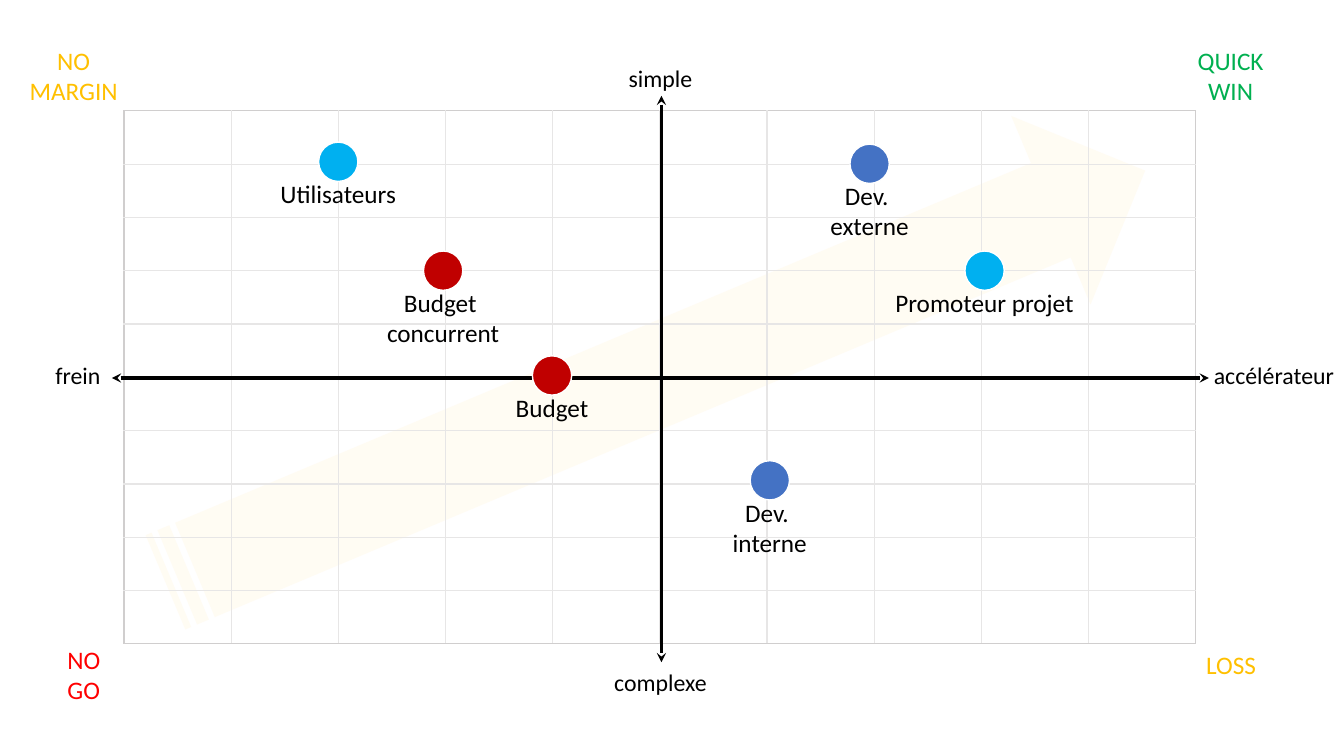
import pptx
import pptx.util
import pptx.dml.color
import pptx.enum.shapes
import pptx.enum.text
import pptx.oxml
import pptx.oxml.ns
from lxml import etree

Inches = pptx.util.Inches
Pt = pptx.util.Pt
MSO_SHAPE = pptx.enum.shapes.MSO_SHAPE
LEFT = pptx.enum.text.PP_ALIGN.LEFT
CENTER = pptx.enum.text.PP_ALIGN.CENTER

COLORS = {
    "black": "000000", "white": "FFFFFF", "cream": "FFFCF3",
    "grid": "E7E6E6", "frame": "D0CECE",
    "amber": "FFC000", "red": "FF0000", "green": "00B050",
    "dark red": "C00000", "sky": "00B0F0", "blue": "4472C4",
}
GRID_SIZE = 10
GRID_LEFT, GRID_TOP, GRID_WIDTH, GRID_HEIGHT = 1.23, 1.1, 10.63, 5.29
CIRCLE = 0.39
LABEL_WIDTH, LABEL_OFFSET = 2, 0.36


def rgb(name):
    return pptx.dml.color.RGBColor.from_string(COLORS[name])


def add_text(box, lines, size, color, wrap, margins=None):
    """Add a text box; lines are (text, alignment) pairs, one per paragraph."""
    frame = slide.shapes.add_textbox(*map(Inches, box)).text_frame
    frame_format = {
        "word_wrap": wrap,
        "auto_size": pptx.enum.text.MSO_AUTO_SIZE.SHAPE_TO_FIT_TEXT,
        **(margins or {}),
    }
    for attribute, value in frame_format.items():
        setattr(frame, attribute, value)
    for index, (text, alignment) in enumerate(lines):
        paragraph = frame.add_paragraph() if index else frame.paragraphs[0]
        paragraph.text = text
        paragraph.alignment = alignment
        for run in paragraph.runs:
            for attribute, value in {"name": "Calibri", "size": Pt(size)}.items():
                setattr(run.font, attribute, value)
            run.font.color.rgb = rgb(color)


presentation = pptx.Presentation()
presentation.slide_width = Inches(13.33)
presentation.slide_height = Inches(7.5)
slide = presentation.slides.add_slide(presentation.slide_layouts[6])

# Background arrow
trend = slide.shapes.add_shape(
    MSO_SHAPE.STRIPED_RIGHT_ARROW, Inches(1.23), Inches(2.72), Inches(10.54), Inches(2.03))
trend.rotation = 337.2
trend.shadow.inherit = False
trend.fill.solid()
trend.fill.fore_color.rgb = rgb("cream")
trend.line.fill.background()

# Grid
table = slide.shapes.add_table(
    GRID_SIZE, GRID_SIZE, Inches(GRID_LEFT), Inches(GRID_TOP),
    Inches(GRID_WIDTH), Inches(GRID_HEIGHT)).table
table.first_row = False
table.horz_banding = False
for column in table.columns:
    column.width = Inches(GRID_WIDTH / GRID_SIZE)
for row in table.rows:
    row.height = Inches(GRID_HEIGHT / GRID_SIZE)
last = GRID_SIZE - 1
for row in range(GRID_SIZE):
    for column in range(GRID_SIZE):
        cell = table.cell(row, column)
        on_frame = {"L": column == 0, "R": column == last, "T": row == 0, "B": row == last}
        properties = cell._tc.get_or_add_tcPr()
        for side, outer in on_frame.items():
            color = COLORS["frame" if outer else "grid"]
            properties.append(pptx.oxml.parse_xml(
                f'<a:ln{side} {pptx.oxml.ns.nsdecls("a")} w="12700"><a:solidFill>'
                f'<a:srgbClr val="{color}"/></a:solidFill></a:ln{side}>'))
        cell.fill.background()

# Axis names
for text, box, alignment, wrap in [
    ("accélérateur", (11.94, 3.53, 1.41, 0.39), LEFT, False),
    ("frein", (0.45, 3.53, 0.65, 0.39), LEFT, False),
    ("simple", (5.49, 0.58, 2.12, 0.39), CENTER, True),
    ("complexe", (5.49, 6.57, 2.12, 0.39), CENTER, True),
]:
    add_text(box, [(text, alignment)], 17, "black", wrap)

# Axes
for ends in [(6.56, 0.95, 6.56, 6.57), (1.11, 3.75, 11.99, 3.75)]:
    axis = slide.shapes.add_connector(
        pptx.enum.shapes.MSO_CONNECTOR.STRAIGHT, *map(Inches, ends))
    axis.line.width = Pt(2.25)
    axis.line.color.rgb = rgb("black")
    for end in ("headEnd", "tailEnd"):
        etree.SubElement(axis.line._get_or_add_ln(), pptx.oxml.ns.qn(f"a:{end}"), type="stealth")
    etree.SubElement(axis._element.spPr, pptx.oxml.ns.qn("a:effectLst"))

# Corner verdicts
for lines, box, color, wrap in [
    ([("NO", CENTER), ("MARGIN", CENTER)], (0.19, 0.4, 1.08, 0.71), "amber", False),
    ([("NO", LEFT), ("GO", LEFT)], (0.57, 6.34, 0.65, 0.71), "red", True),
    ([("QUICK", LEFT), ("WIN", CENTER)], (11.78, 0.4, 0.86, 0.71), "green", False),
    ([("LOSS", CENTER)], (11.86, 6.39, 0.7, 0.4), "amber", False),
]:
    add_text(box, lines, 18, color, wrap)

# Factors: a circle with its name underneath
no_margins = dict.fromkeys(("margin_left", "margin_right", "margin_top", "margin_bottom"), 0)
for text, left, top, color in [
    ("Dev. \vinterne", 7.44, 4.57, "blue"),
    ("Dev. \vexterne", 8.43, 1.43, "blue"),
    ("Promoteur projet", 9.57, 2.49, "sky"),
    ("Utilisateurs", 3.16, 1.41, "sky"),
    ("Budget", 5.28, 3.53, "dark red"),
    ("Budget \vconcurrent", 4.2, 2.49, "dark red"),
]:
    circle = slide.shapes.add_shape(
        MSO_SHAPE.OVAL, Inches(left), Inches(top), Inches(CIRCLE), Inches(CIRCLE))
    circle.shadow.inherit = False
    circle.fill.solid()
    circle.fill.fore_color.rgb = rgb(color)
    circle.line.color.rgb = rgb("white")
    circle.line.width = Pt(1)
    label_left = left + (CIRCLE - LABEL_WIDTH) / 2
    label_height = 0.3 * len(text.split("\v"))
    add_text((label_left, top + LABEL_OFFSET, LABEL_WIDTH, label_height),
             [(text, CENTER)], 18, "black", True, no_margins)

presentation.save("out.pptx")
